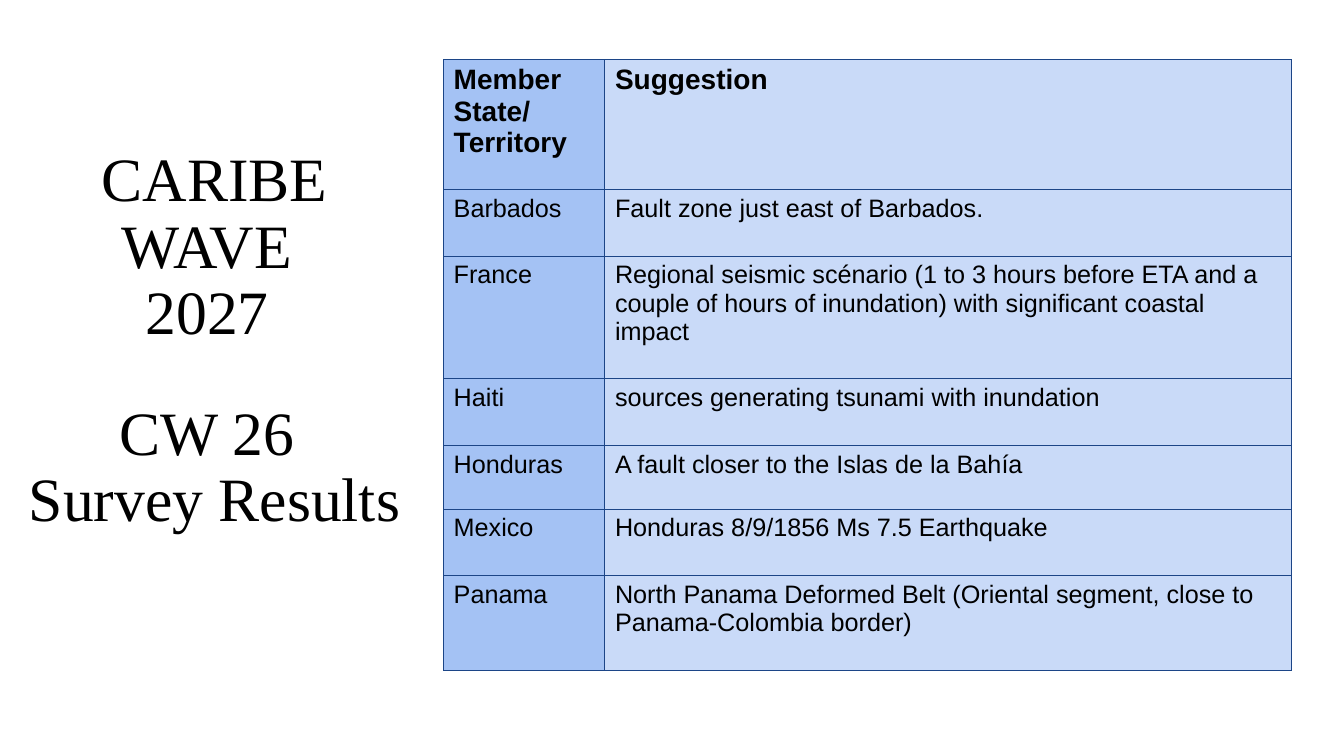
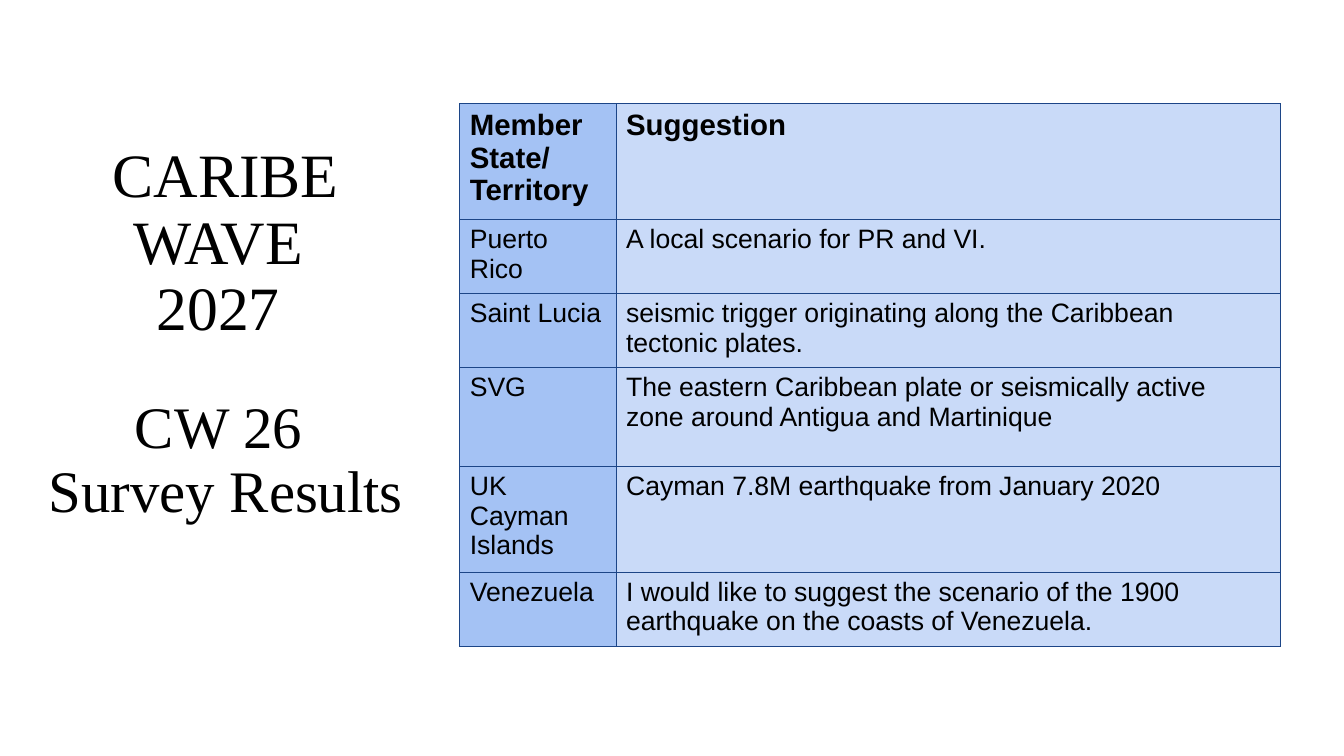
from lxml import etree
from pptx import Presentation
from pptx.dml.color import RGBColor
from pptx.enum import text as text_enum
from pptx.oxml.ns import qn
from pptx.util import Inches, Pt

BLACK = RGBColor(0x00, 0x00, 0x00)
STATE_FILL = RGBColor(0xA4, 0xC2, 0xF4)
SUGGESTION_FILL = RGBColor(0xC9, 0xDA, 0xF8)
BORDER = RGBColor(0x1C, 0x45, 0x87)
BORDER_WIDTH = Pt(0.75)
TITLE_FONT, TABLE_FONT = "Times New Roman", "Arial"
TITLE_PITCH = 1.08
TITLE_GAP = Pt(38.5)

TITLE_PARTS = (("CARIBE WAVE ", "2027 "), ("CW 26 ", "Survey Results"))
HEADER = (("Member State/", "Territory"), ("Suggestion",))

FIRST_ROWS = [
    ("Barbados", "Fault zone just east of Barbados."),
    ("France", "Regional seismic scénario (1 to 3 hours before ETA and a couple of "
               "hours of inundation) with significant coastal impact"),
    ("Haiti", "sources generating tsunami with inundation"),
    ("Honduras", "A fault closer to the Islas de la Bahía"),
    ("Mexico", "Honduras 8/9/1856 Ms 7.5 Earthquake"),
    ("Panama", "North Panama Deformed Belt (Oriental segment, close to "
               "Panama-Colombia border)"),
]
SECOND_ROWS = [
    ("Puerto Rico", "A local scenario for PR and VI."),
    ("Saint Lucia", "seismic trigger originating along the Caribbean tectonic plates."),
    ("SVG", "The eastern Caribbean plate or seismically active zone around "
            "Antigua and Martinique"),
    ("UK Cayman Islands", "Cayman 7.8M earthquake from January 2020"),
    ("Venezuela", "I would like to suggest the scenario of the 1900 earthquake on "
                  "the coasts of Venezuela."),
]


def write(para, text, *, font, size, bold=False):
    span = para.add_run()
    span.text = text
    span.font.name = font
    span.font.size = Pt(size)
    span.font.bold = bold
    span.font.color.rgb = BLACK


def add_title(page, box, sizes, bottom_inset):
    """Place the two title parts, centred in the box, each at its own size."""
    frame = page.shapes.add_textbox(*map(Inches, box)).text_frame
    frame.word_wrap = True
    frame.vertical_anchor = text_enum.MSO_ANCHOR.MIDDLE
    frame.margin_left = frame.margin_right = Inches(0.05)
    frame.margin_bottom = Inches(bottom_inset)
    for index, (lines, size) in enumerate(zip(TITLE_PARTS, sizes)):
        para = frame.add_paragraph() if index else frame.paragraphs[0]
        para.alignment = text_enum.PP_ALIGN.CENTER
        para.line_spacing = Pt(size * TITLE_PITCH)
        para.space_before = TITLE_GAP if index else Pt(0)
        for number, line in enumerate(lines):
            if number:
                para.add_line_break()
            write(para, line, font=TITLE_FONT, size=size)


def outline(cell):
    """Draw the four borders of a cell."""
    props = cell._tc.get_or_add_tcPr()
    for position, side in enumerate(("a:lnL", "a:lnR", "a:lnT", "a:lnB")):
        line = etree.Element(qn(side), w=str(int(BORDER_WIDTH)))
        fill = etree.SubElement(line, qn("a:solidFill"))
        etree.SubElement(fill, qn("a:srgbClr"), val=str(BORDER))
        props.insert(position, line)


def fill_cell(cell, lines, fill, **style):
    cell.fill.solid()
    cell.fill.fore_color.rgb = fill
    cell.margin_left = cell.margin_right = Inches(0.1)
    cell.margin_top = cell.margin_bottom = Inches(0.05)
    outline(cell)
    for index, line in enumerate(lines):
        para = cell.text_frame.add_paragraph() if index else cell.text_frame.paragraphs[0]
        write(para, line, font=TABLE_FONT, **style)


def add_suggestions(page, corner, widths, heights, rows, header_size, body_size):
    contents = [HEADER] + [((state,), (idea,)) for state, idea in rows]
    box = (*corner, sum(widths), sum(heights))
    table = page.shapes.add_table(len(contents), len(widths), *map(Inches, box)).table
    table.first_row = table.horz_banding = False
    for column, width in zip(table.columns, widths):
        column.width = Inches(width)
    for row, height in zip(table.rows, heights):
        row.height = Inches(height)
    for r, cells in enumerate(contents):
        size = body_size if r else header_size
        for c, (lines, fill) in enumerate(zip(cells, (STATE_FILL, SUGGESTION_FILL))):
            fill_cell(table.cell(r, c), lines, fill, size=size, bold=r == 0)


def add_survey_page(deck, title, suggestions):
    page = deck.slides.add_slide(deck.slide_layouts[6])
    add_title(page, **title)
    add_suggestions(page, **suggestions)


def main():
    deck = Presentation()
    deck.slide_width, deck.slide_height = Inches(13.33), Inches(7.5)
    add_survey_page(
        deck,
        dict(box=(0.12, 1.07, 4.02, 5.37), sizes=(44, 44), bottom_inset=0.8),
        dict(corner=(4.4, 0.59), widths=(1.6, 6.81),
             heights=(1.29, 0.66, 1.22, 0.66, 0.63, 0.66, 0.94),
             rows=FIRST_ROWS, header_size=20, body_size=18))
    add_survey_page(
        deck,
        dict(box=(0.38, 0.38, 3.72, 5.86), sizes=(44, 42), bottom_inset=0.05),
        dict(corner=(4.56, 1.03), widths=(1.55, 6.59),
             heights=(1.07, 0.69, 0.69, 0.98, 0.98, 0.69),
             rows=SECOND_ROWS, header_size=21, body_size=19))
    deck.save("out.pptx")


if __name__ == "__main__":
    main()
